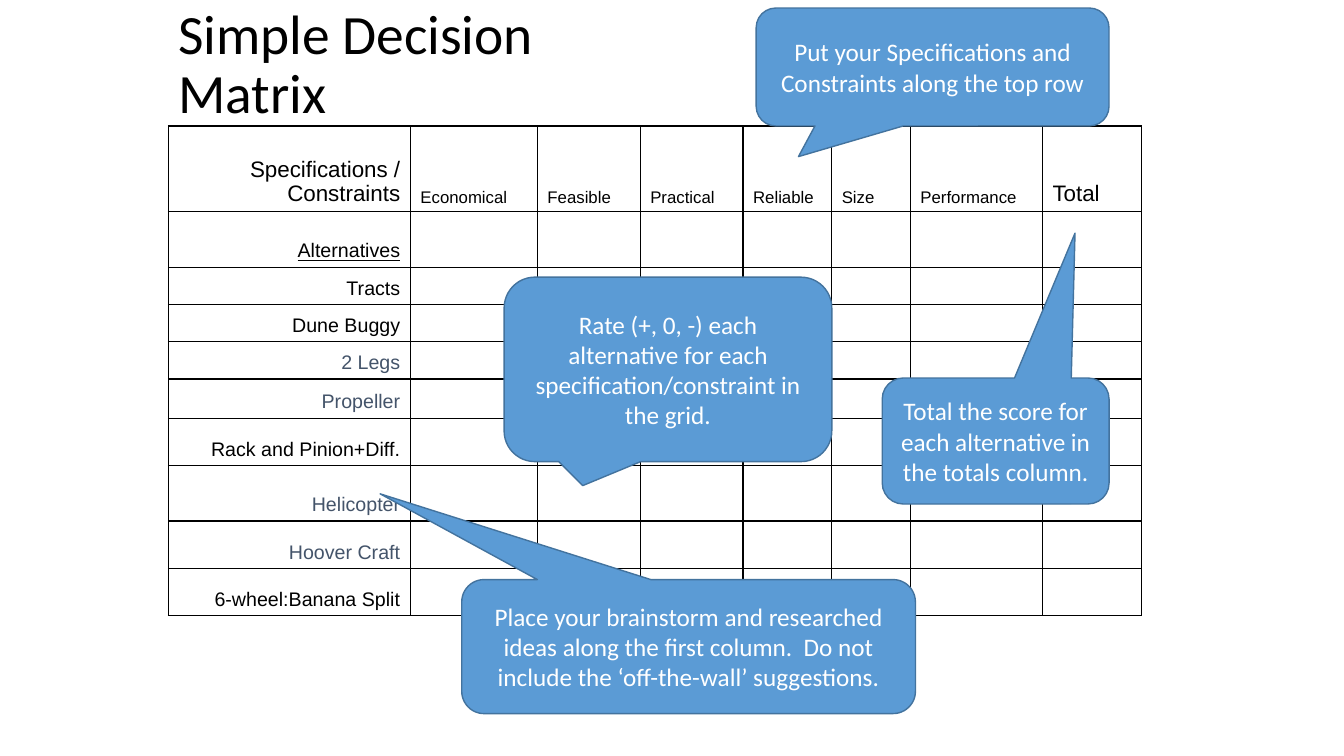
from dataclasses import dataclass

from lxml import etree
from pptx import Presentation
from pptx.dml.color import RGBColor
from pptx.enum.shapes import MSO_SHAPE
from pptx.enum.text import MSO_ANCHOR, PP_ALIGN
from pptx.oxml.ns import qn
from pptx.util import Inches, Pt

CALLOUT_SHAPE = MSO_SHAPE.ROUNDED_RECTANGULAR_CALLOUT
MIDDLE, BOTTOM = MSO_ANCHOR.MIDDLE, MSO_ANCHOR.BOTTOM
LEFT, CENTER, RIGHT = PP_ALIGN.LEFT, PP_ALIGN.CENTER, PP_ALIGN.RIGHT


@dataclass(frozen=True)
class Theme:
    black: str = "000000"
    slate: str = "44546A"
    white: str = "FFFFFF"
    callout_fill: str = "5B9BD5"
    callout_line: str = "43739E"
    heading_font: str = "Calibri"
    table_font: str = "Arial"
    title_size: float = 39.6
    callout_size: float = 18
    corner_size: float = 16
    alternative_size: float = 14
    criterion_size: float = 12


THEME = Theme()


@dataclass(frozen=True)
class Alternative:
    name: str
    height: float
    color: str = THEME.black
    underline: bool = False


@dataclass(frozen=True)
class Criterion:
    name: str
    width: float
    size: float = THEME.criterion_size
    align: PP_ALIGN = LEFT


@dataclass(frozen=True)
class Callout:
    text: str
    box: tuple[float, float, float, float]
    tip: tuple[float, float]  # offset from the centre, in widths and heights


HEADER_HEIGHT = 0.85
CRITERIA = [
    Criterion("Specifications / Constraints", 2.4, THEME.corner_size, RIGHT),
    Criterion("Economical", 1.26),
    Criterion("Feasible", 1.02),
    Criterion("Practical", 1.02),
    Criterion("Reliable", 0.88),
    Criterion("Size", 0.78),
    Criterion("Performance", 1.31),
    Criterion("Total", 0.98, THEME.corner_size),
]
ALTERNATIVES = [
    Alternative("Alternatives", 0.55, underline=True),
    Alternative("Tracts", 0.37),
    Alternative("Dune Buggy", 0.37),
    Alternative("2 Legs", 0.37, THEME.slate),
    Alternative("Propeller", 0.39, THEME.slate),
    Alternative("Rack and Pinion+Diff.", 0.47),
    Alternative("Helicopter", 0.55, THEME.slate),
    Alternative("Hoover Craft", 0.47, THEME.slate),
    Alternative("6-wheel:Banana Split", 0.47),
]
CALLOUTS = [
    Callout("Put your Specifications and Constraints along the top row",
            (7.5, 0.08, 3.5, 1.17), (-0.38, 0.76)),
    Callout("Place your brainstorm and researched ideas along the first column.  "
            "Do not include the ‘off-the-wall’ suggestions.",
            (4.58, 5.75, 4.5, 1.33), (-0.68, -1.14)),
    Callout("Rate (+, 0, -) each alternative for each specification/constraint in the grid.",
            (5, 2.75, 3.25, 1.83), (-0.26, 0.63)),
    Callout("Total the score for each alternative in the totals column.",
            (8.75, 3.75, 2.25, 1.25), (0.35, -1.65)),
]


def write(frame, text: str, font: str, size: float, color: str, align=LEFT):
    """Fill a text frame with one styled paragraph and return it."""
    frame.word_wrap = True
    paragraph = frame.paragraphs[0]
    paragraph.text = text
    paragraph.alignment = align
    paragraph.font.name = font
    paragraph.font.size = Pt(size)
    paragraph.font.color.rgb = RGBColor.from_string(color)
    return paragraph


def add_borders(cell) -> None:
    properties = cell._tc.get_or_add_tcPr()
    for position, side in enumerate(("a:lnL", "a:lnR", "a:lnT", "a:lnB")):
        border = etree.Element(qn(side), w=str(Pt(1)))
        fill = etree.SubElement(border, qn("a:solidFill"))
        etree.SubElement(fill, qn("a:srgbClr"), val=THEME.black)
        properties.insert(position, border)


def add_title(slide) -> None:
    title = slide.shapes.add_textbox(*map(Inches, (1.67, 0.03, 4.67, 1.25)))
    title.text_frame.vertical_anchor = MIDDLE
    paragraph = write(title.text_frame, "Simple Decision Matrix",
                      THEME.heading_font, THEME.title_size, THEME.black)
    paragraph.line_spacing = 0.9


def add_matrix(slide) -> None:
    widths = [criterion.width for criterion in CRITERIA]
    heights = [HEADER_HEIGHT] + [alternative.height for alternative in ALTERNATIVES]
    matrix = slide.shapes.add_table(
        len(heights), len(widths),
        *map(Inches, (1.67, 1.25, sum(widths), sum(heights)))).table
    matrix.first_row = matrix.horz_banding = False
    for column, width in zip(matrix.columns, widths):
        column.width = Inches(width)
    for row, height in zip(matrix.rows, heights):
        row.height = Inches(height)

    # Every cell is open, ruled and set small so that empty rows keep their height
    for cell in matrix.iter_cells():
        cell.fill.background()
        cell.vertical_anchor = BOTTOM
        add_borders(cell)
        write(cell.text_frame, "", THEME.table_font, THEME.criterion_size, THEME.black)
        end = etree.SubElement(cell.text_frame.paragraphs[0]._p, qn("a:endParaRPr"))
        end.set("sz", str(THEME.criterion_size * 100))

    # Top row
    for column, criterion in enumerate(CRITERIA):
        write(matrix.cell(0, column).text_frame, criterion.name, THEME.table_font,
              criterion.size, THEME.black, criterion.align)

    # First column
    for row, alternative in enumerate(ALTERNATIVES, start=1):
        label = write(matrix.cell(row, 0).text_frame, alternative.name, THEME.table_font,
                      THEME.alternative_size, alternative.color, RIGHT)
        label.font.underline = alternative.underline


def add_callout(slide, callout: Callout) -> None:
    bubble = slide.shapes.add_shape(CALLOUT_SHAPE, *map(Inches, callout.box))
    bubble.shadow.inherit = False
    bubble.adjustments[0], bubble.adjustments[1] = callout.tip
    bubble.fill.solid()
    bubble.fill.fore_color.rgb = RGBColor.from_string(THEME.callout_fill)
    bubble.line.color.rgb = RGBColor.from_string(THEME.callout_line)
    bubble.line.width = Pt(1)
    bubble.text_frame.vertical_anchor = MIDDLE
    write(bubble.text_frame, callout.text, THEME.heading_font,
          THEME.callout_size, THEME.white, CENTER)


def main() -> None:
    presentation = Presentation()
    presentation.slide_width = Inches(13.33)
    presentation.slide_height = Inches(7.5)
    slide = presentation.slides.add_slide(presentation.slide_layouts[6])
    add_title(slide)
    add_matrix(slide)
    for callout in CALLOUTS:
        add_callout(slide, callout)
    presentation.save("out.pptx")


if __name__ == "__main__":
    main()
